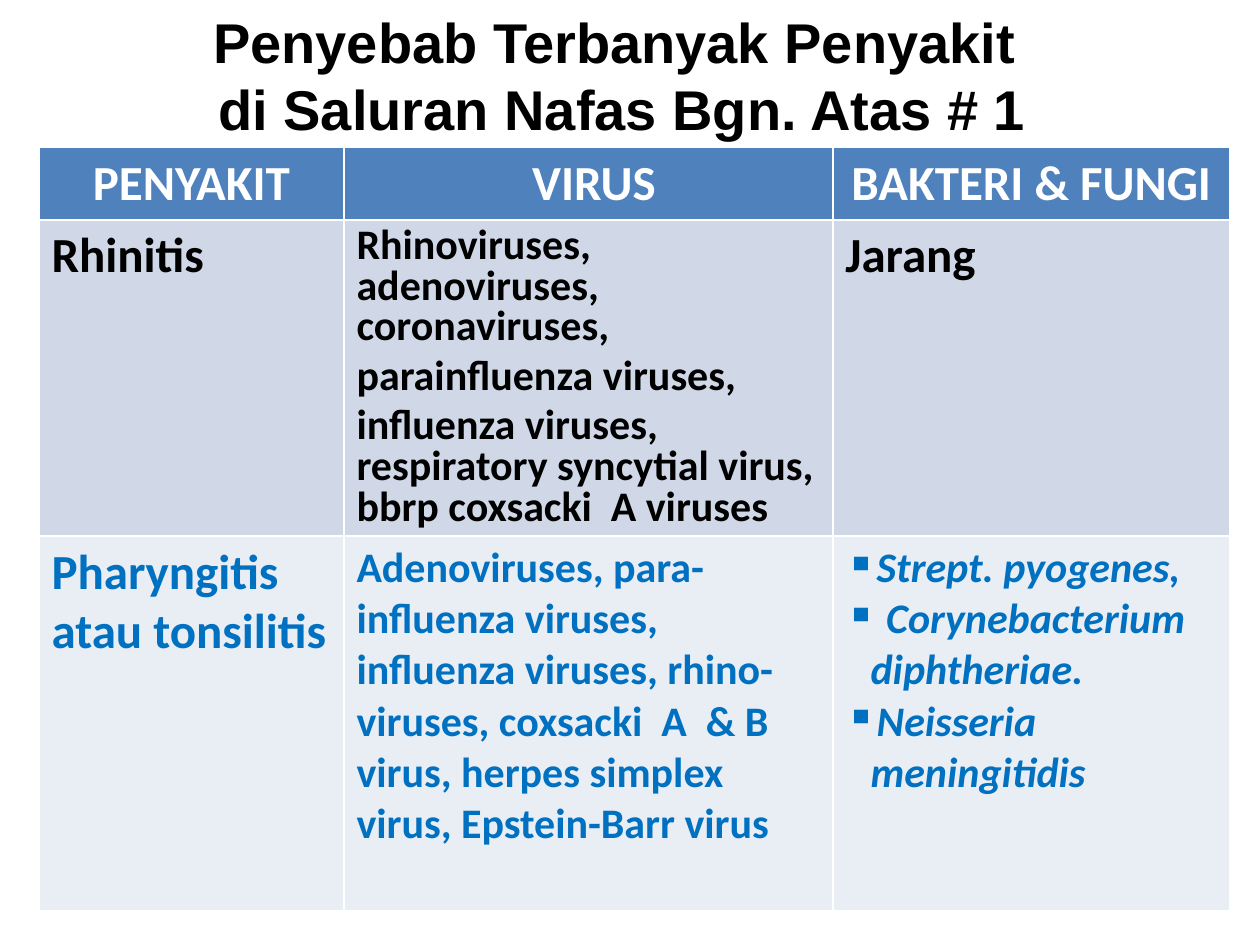
"""Build a slide tabulating the common causes of upper airway disease."""
from lxml import etree
from pptx import Presentation
from pptx.dml import color
from pptx.enum import text
from pptx.oxml import ns
from pptx.util import Inches, Pt

COLORS = {"header": "4F81BD", "rhinitis": "D0D8E8", "pharyngitis": "E9EDF4",
          "white": "FFFFFF", "black": "000000", "blue": "0070C0"}
TITLE = "Penyebab Terbanyak Penyakit \ndi Saluran Nafas Bgn. Atas # 1"
HEADINGS = ["PENYAKIT", " VIRUS", "BAKTERI & FUNGI"]
RHINITIS_VIRUSES = ("Rhinoviruses, adenoviruses, coronaviruses,\n"
                    "parainfluenza viruses,\n"
                    "influenza viruses, respiratory syncytial virus, "
                    "bbrp coxsacki  A viruses")
PHARYNGITIS_VIRUSES = ("Adenoviruses, para-influenza viruses, influenza viruses, "
                       "rhino-viruses, coxsacki  A  & B virus, herpes simplex "
                       "virus, Epstein-Barr virus")
PHARYNGITIS_BACTERIA = ("Strept. pyogenes,\n Corynebacterium diphtheriae.\n"
                        "Neisseria meningitidis")
COLUMN_WIDTHS = [2.42, 3.88, 3.15]
ROW_HEIGHTS = [0.56, 2.47, 2.97]


def rgb(name):
    return color.RGBColor.from_string(COLORS[name])


def format_text(frame, size, ink, face="Calibri", align=None, italic=None):
    for paragraph in frame.paragraphs:
        paragraph.alignment = align
        for run in paragraph.runs:
            font = run.font
            font.name, font.size, font.bold, font.italic = face, Pt(size), True, italic
            font.color.rgb = rgb(ink)


def add_title(slide):
    title = slide.shapes.title
    title.left, title.top = Inches(1.57), Inches(0)
    title.width, title.height = Inches(6.74), Inches(1.18)
    frame = title.text_frame
    frame.text = TITLE
    frame.word_wrap = False
    frame.auto_size = text.MSO_AUTO_SIZE.NONE
    format_text(frame, 32, "black", "Arial", text.PP_ALIGN.CENTER)


def fill_cell(cell, content, fill, ink, size=28, **style):
    cell.fill.solid()
    cell.fill.fore_color.rgb = rgb(fill)
    cell.text_frame.text = content
    format_text(cell.text_frame, size, ink, **style)


def add_bullet(paragraph, indent):
    properties = paragraph._p.get_or_add_pPr()
    properties.set("marL", str(Inches(indent)))
    properties.set("indent", str(-Inches(indent)))
    etree.SubElement(properties, ns.qn("a:buChar")).set("char", "▪")


def add_causes_table(slide):
    causes = slide.shapes.add_table(3, 3, Inches(0.31), Inches(1.17), Inches(9.45),
                                    Inches(sum(ROW_HEIGHTS))).table
    for column, width in zip(causes.columns, COLUMN_WIDTHS):
        column.width = Inches(width)
    for row, height in zip(causes.rows, ROW_HEIGHTS):
        row.height = Inches(height)

    for index, heading in enumerate(HEADINGS):
        fill_cell(causes.cell(0, index), heading, "header", "white",
                  align=text.PP_ALIGN.CENTER)

    fill_cell(causes.cell(1, 0), "Rhinitis", "rhinitis", "black")
    fill_cell(causes.cell(1, 1), RHINITIS_VIRUSES, "rhinitis", "black", 24)
    fill_cell(causes.cell(1, 2), "Jarang", "rhinitis", "black")
    for paragraph in causes.cell(1, 1).text_frame.paragraphs:
        paragraph.line_spacing = 0.8
        paragraph.space_before = Pt(4.8)

    fill_cell(causes.cell(2, 0), "Pharyngitis  atau tonsilitis", "pharyngitis", "blue")
    fill_cell(causes.cell(2, 1), PHARYNGITIS_VIRUSES, "pharyngitis", "blue", 24)
    fill_cell(causes.cell(2, 2), PHARYNGITIS_BACTERIA, "pharyngitis", "blue", 24,
              italic=True)
    for paragraph, indent in zip(causes.cell(2, 2).text_frame.paragraphs, [0, 0.2, 0.2]):
        add_bullet(paragraph, indent)


def main():
    deck = Presentation()
    deck.slide_width, deck.slide_height = Inches(10), Inches(7.5)
    slide = deck.slides.add_slide(deck.slide_layouts[5])
    add_title(slide)
    add_causes_table(slide)
    deck.save("out.pptx")


if __name__ == "__main__":
    main()
